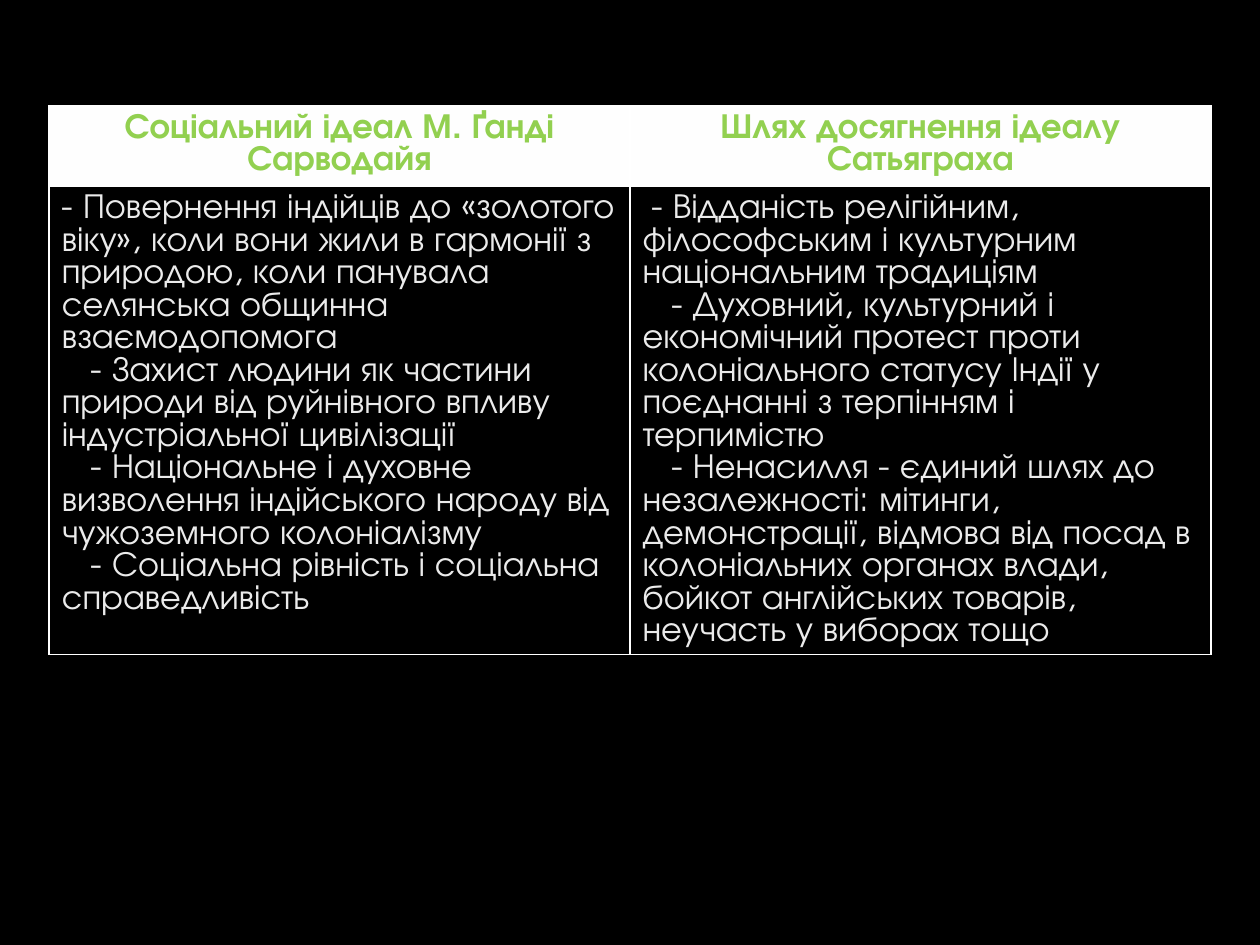
from lxml.etree import SubElement
from pptx import Presentation
from pptx.dml.color import RGBColor
from pptx.enum.text import PP_ALIGN
from pptx.oxml.ns import qn
from pptx.util import Inches, Pt

BLACK = RGBColor(0x00, 0x00, 0x00)
WHITE = RGBColor(0xFF, 0xFF, 0xFF)
HEADER_FILL = RGBColor(0xFE, 0xFE, 0xFE)
GREEN = RGBColor(0x92, 0xD0, 0x50)
LIGHT_GRAY = RGBColor(0xEB, 0xEB, 0xEB)

FIRST_INDENT = 0.23
COLUMNS = [
    (
        "Соціальний ідеал М. Ґанді Сарводайя",
        [
            ("- Повернення індійців до «золотого віку», коли вони жили в гармонії з природою, "
             "коли панувала селянська общинна взаємодопомога", 0),
            ("- Захист людини як частини природи від руйнівного впливу "
             "індустріальної цивілізації", FIRST_INDENT),
            ("- Національне і духовне визволення індійського народу від "
             "чужоземного колоніалізму", FIRST_INDENT),
            ("- Соціальна рівність і соціальна справедливість", FIRST_INDENT),
        ],
    ),
    (
        "Шлях досягнення ідеалу Сатьяграха",
        [
            ("- Відданість релігійним, філософським і культурним національним традиціям", 0.07),
            ("- Духовний, культурний і економічний протест проти колоніального статусу Індії "
             "у поєднанні з терпінням і терпимістю", FIRST_INDENT),
            ("- Ненасилля - єдиний шлях до незалежності: мітинги, демонстрації, відмова від "
             "посад в колоніальних органах влади, бойкот англійських товарів, "
             "неучасть у виборах тощо", FIRST_INDENT),
        ],
    ),
]


class SlideBuilder:
    font_name = "TeX Gyre Adventor"
    font_size = Pt(20)

    def __init__(self, presentation):
        self.slide = presentation.slides.add_slide(presentation.slide_layouts[6])

    def background(self, color):
        fill = self.slide.background.fill
        fill.solid()
        fill.fore_color.rgb = color

    def table(self, left, top, widths, heights):
        shape = self.slide.shapes.add_table(
            len(heights), len(widths), Inches(left), Inches(top),
            Inches(sum(widths)), Inches(sum(heights)))
        for column, width in zip(shape.table.columns, widths):
            column.width = Inches(width)
        for row, height in zip(shape.table.rows, heights):
            row.height = Inches(height)
        return shape.table

    def borders(self, cell, color):
        properties = cell._tc.get_or_add_tcPr()
        for side in ("a:lnL", "a:lnR", "a:lnT", "a:lnB"):
            line = SubElement(properties, qn(side), w=str(Pt(1)))
            fill = SubElement(line, qn("a:solidFill"))
            SubElement(fill, qn("a:srgbClr"), val=str(color))

    def paragraph(self, paragraph, text, color, bold, alignment, indent):
        paragraph.alignment = alignment
        properties = paragraph._p.get_or_add_pPr()
        properties.set("marL", "0")
        properties.set("indent", str(Inches(indent)))
        run = paragraph.add_run()
        run.text = text
        run.font.name = self.font_name
        run.font.size = self.font_size
        run.font.bold = bold
        run.font.color.rgb = color

    def header_cell(self, cell, text):
        self.borders(cell, WHITE)
        cell.fill.solid()
        cell.fill.fore_color.rgb = HEADER_FILL
        self.paragraph(cell.text_frame.paragraphs[0], text, GREEN, True, PP_ALIGN.CENTER, 0)

    def body_cell(self, cell, items):
        self.borders(cell, WHITE)
        cell.fill.background()
        frame = cell.text_frame
        for index, (text, indent) in enumerate(items):
            paragraph = frame.add_paragraph() if index else frame.paragraphs[0]
            self.paragraph(paragraph, text, LIGHT_GRAY, False, PP_ALIGN.LEFT, indent)


def main():
    presentation = Presentation()
    presentation.slide_width = Inches(10)
    presentation.slide_height = Inches(7.5)
    builder = SlideBuilder(presentation)
    builder.background(BLACK)
    table = builder.table(0.39, 0.84, [4.61, 4.61], [0.64, 3.7])
    for index, (heading, items) in enumerate(COLUMNS):
        builder.header_cell(table.cell(0, index), heading)
        builder.body_cell(table.cell(1, index), items)
    presentation.save("out.pptx")


if __name__ == "__main__":
    main()
